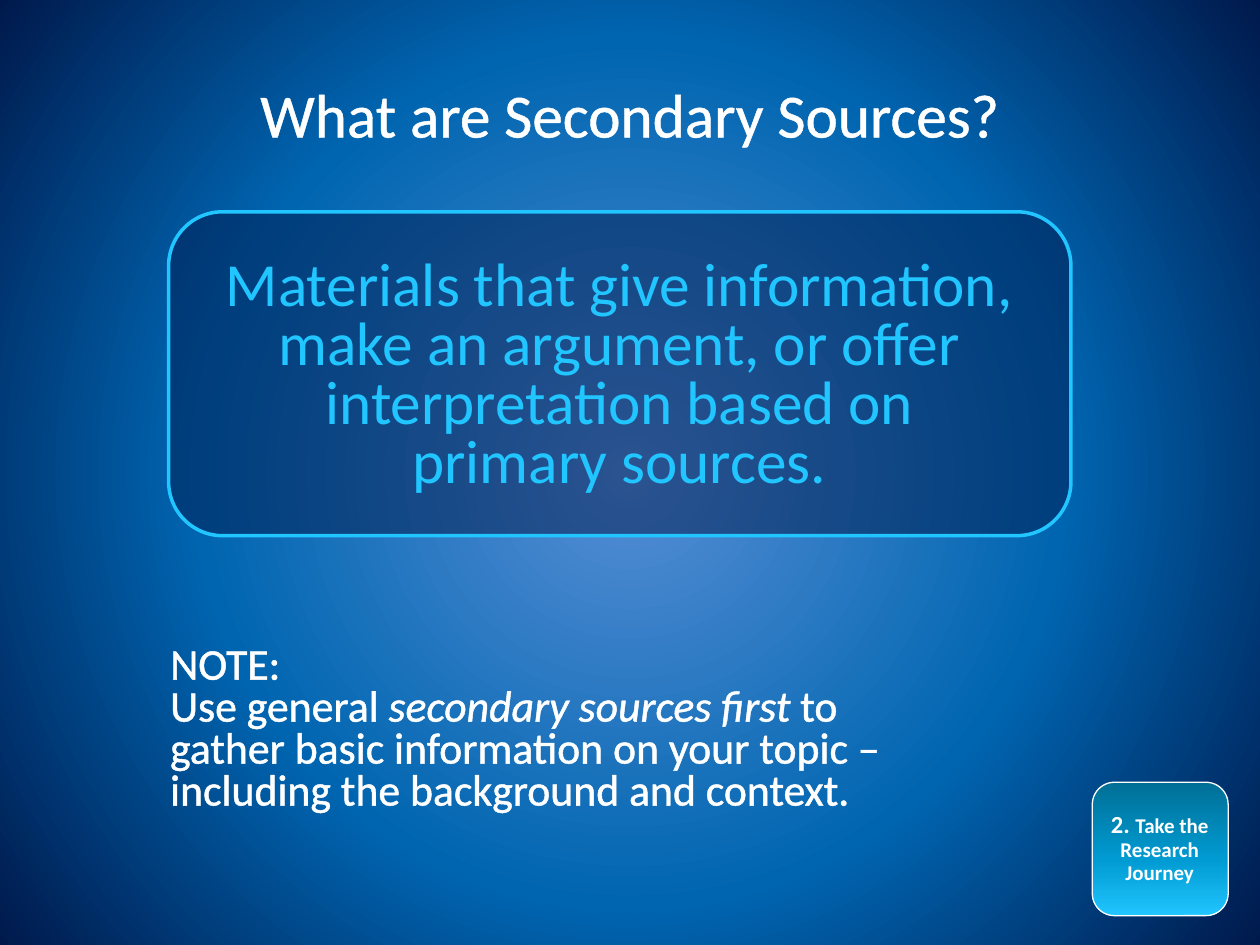
from dataclasses import dataclass

from lxml.etree import SubElement
from pptx import Presentation
from pptx.dml.color import RGBColor
from pptx.enum.shapes import MSO_SHAPE
from pptx.enum.text import MSO_ANCHOR, MSO_AUTO_SIZE, PP_ALIGN
from pptx.oxml.ns import qn
from pptx.util import Cm, Pt


@dataclass(frozen=True)
class Theme:
    font: str = "Calibri"
    white: str = "FFFFFF"
    navy: str = "00194C"
    cyan: str = "21C5FF"
    backdrop: tuple = ((1, "558ED5"), (55, "0065B0"), (100, "00194C"))
    button: tuple = ((0, "006F96"), (58, "009BD2"), (100, "21C5FF"))
    heading: int = 35
    body: int = 25
    number: int = 14
    label: int = 12


def set_gradient(fill_parent, stops, radial=False):
    """Replace the solid fill of a properties element with a gradient."""
    solid = fill_parent.find(qn("a:solidFill"))
    grad = SubElement(fill_parent, qn("a:gradFill"), rotWithShape="1")
    fill_parent.replace(solid, grad)
    gs_list = SubElement(grad, qn("a:gsLst"))
    for position, color in stops:
        gs = SubElement(gs_list, qn("a:gs"), pos=str(position * 1000))
        SubElement(gs, qn("a:srgbClr"), val=color)
    if radial:
        center = SubElement(grad, qn("a:path"), {"path": "circle"})
        SubElement(center, qn("a:fillToRect"), {side: "50000" for side in "ltrb"})
    else:
        SubElement(grad, qn("a:lin"), ang="5400000", scaled="0")


def outline_text(sp, color, width):
    for r_pr in sp.element.iter(qn("a:rPr")):
        ln = SubElement(r_pr, qn("a:ln"), w=str(Pt(width)))
        SubElement(SubElement(ln, qn("a:solidFill")), qn("a:srgbClr"), val=color)
        r_pr.insert(0, ln)


class SlideBuilder:
    def __init__(self, slide, theme):
        self.s = slide
        self.theme = theme

    def background(self, stops):
        self.s.background.fill.solid()
        bg_pr = self.s.element.find(".//" + qn("p:bgPr"))
        set_gradient(bg_pr, stops, radial=True)

    def panel(self, box, line, width, alpha=None, stops=None):
        """Add a rounded rectangle in see-through navy or a vertical gradient."""
        sp = self.s.shapes.add_shape(MSO_SHAPE.ROUNDED_RECTANGLE, *map(Cm, box))
        sp.shadow.inherit = False
        sp.line.color.rgb = RGBColor.from_string(line)
        sp.line.width = Pt(width)
        sp.fill.solid()
        sp.fill.fore_color.rgb = RGBColor.from_string(self.theme.navy)
        sp_pr = sp.element.spPr
        if stops:
            set_gradient(sp_pr, stops)
        elif alpha is not None:
            clr = sp_pr.find(qn("a:solidFill")).find(qn("a:srgbClr"))
            SubElement(clr, qn("a:alpha"), val=str(alpha * 1000))

    def text(self, box, paragraphs, size, color=None, align=PP_ALIGN.CENTER,
             spacing=0.8, outline=None, inset=None):
        """Add text; each run is (words, font settings that differ)."""
        color = color or self.theme.white
        sp = self.s.shapes.add_textbox(*map(Cm, box))
        tf = sp.text_frame
        tf.word_wrap = True
        if inset is None:
            tf.auto_size = MSO_AUTO_SIZE.SHAPE_TO_FIT_TEXT
        else:
            tf.vertical_anchor = MSO_ANCHOR.MIDDLE
            tf.margin_left = tf.margin_right = Cm(inset)
            tf.margin_top = tf.margin_bottom = Cm(inset)
        for i, runs in enumerate(paragraphs):
            p = tf.add_paragraph() if i else tf.paragraphs[0]
            p.alignment = align
            p.line_spacing = spacing
            for words, settings in runs:
                self.run(p, words, color, {"size": Pt(size), **settings})
        if outline:
            outline_text(sp, color, outline)

    def run(self, p, words, color, settings):
        r = p.add_run()
        r.text = words
        r.font.name = self.theme.font
        r.font.color.rgb = RGBColor.from_string(color)
        for name, value in settings.items():
            setattr(r.font, name, value)


def main():
    prs = Presentation()
    prs.slide_width, prs.slide_height = Cm(25.4), Cm(19.05)
    theme = Theme()
    slide = SlideBuilder(prs.slides.add_slide(prs.slide_layouts[6]), theme)

    slide.background(theme.backdrop)
    slide.text((0.64, 1.7, 24.13, 1.47), [[("What are Secondary Sources?", {})]],
               theme.heading, outline=1)

    slide.panel((3.4, 4.27, 18.19, 6.53), theme.cyan, 2, alpha=50)
    definition = ("Materials that give information, make an argument, or offer "
                  "interpretation based on primary sources.")
    slide.text((4.22, 5.11, 16.54, 5.05), [[(definition, {})]],
               theme.heading, theme.cyan)

    note = [
        [("NOTE:", {})],
        [("Use general ", {}),
         ("secondary sources first ", {"italic": True}),
         ("to gather basic information on your topic – "
          "including the background and context.", {})],
    ]
    slide.text((3.18, 12.9, 15.04, 3.71), note, theme.body,
               align=PP_ALIGN.LEFT, outline=0.5)

    slide.panel((22.02, 15.77, 2.74, 2.69), theme.white, 0.75, stops=theme.button)
    step = [("2. ", {"bold": True, "size": Pt(theme.number)}),
            ("Take the Research Journey", {"bold": True})]
    slide.text((22.02, 15.88, 2.72, 2.46), [step], theme.label,
               spacing=0.9, inset=0.2)

    prs.save("out.pptx")


if __name__ == "__main__":
    main()
